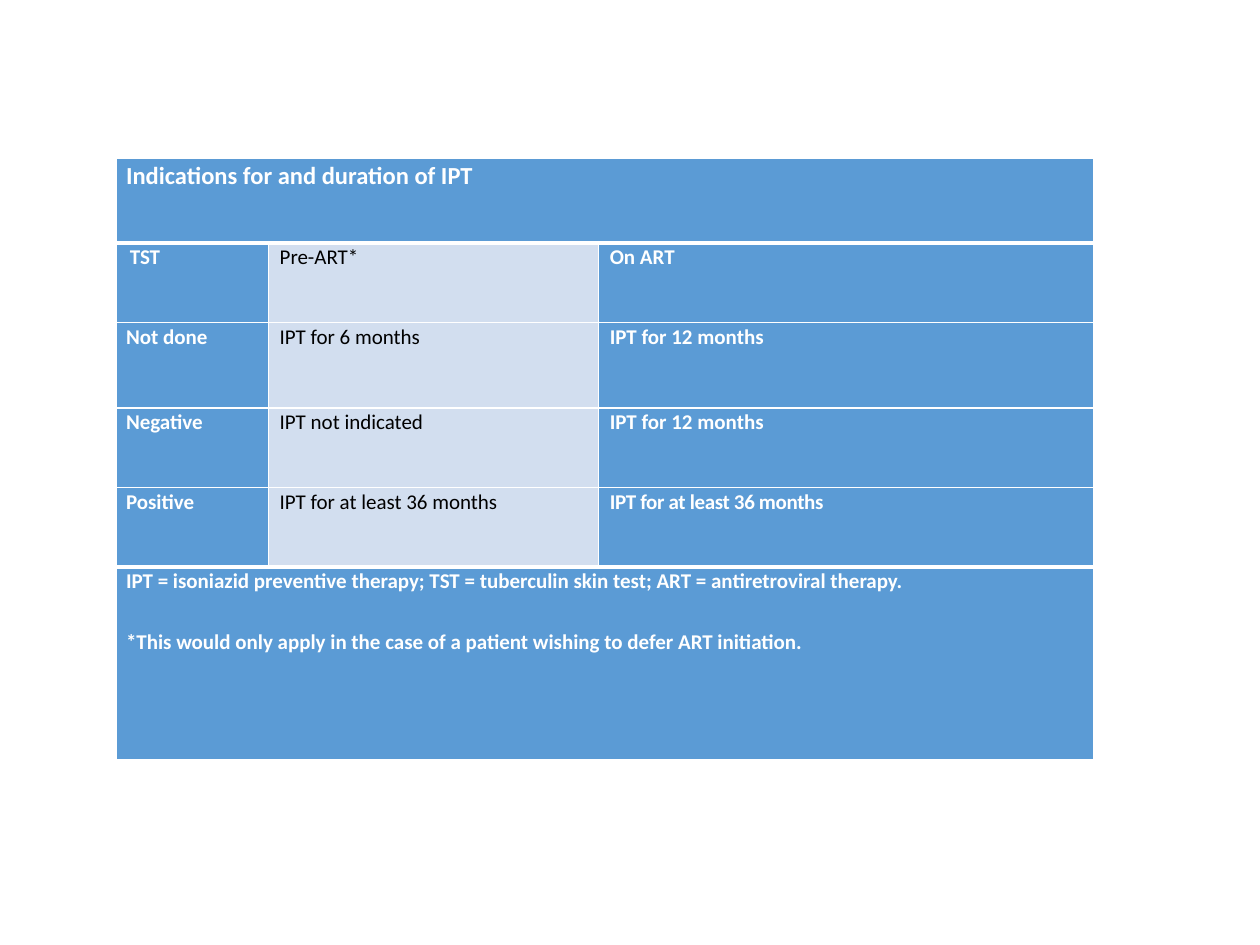
from lxml.etree import SubElement
from pptx import Presentation
from pptx.dml.color import RGBColor
from pptx.oxml.ns import qn
from pptx.util import Inches, Pt

BLUE = RGBColor(0x5B, 0x9B, 0xD5)
PALE = RGBColor(0xD2, 0xDE, 0xEF)
WHITE = RGBColor(0xFF, 0xFF, 0xFF)
BLACK = RGBColor(0, 0, 0)

TITLE = "Indications for and duration of IPT"
REGIMENS = [
    ("TST", "Pre-ART*", "On ART"),
    ("Not done", "IPT for 6 months", "IPT for 12 months"),
    ("Negative", "IPT not indicated", "IPT for 12 months"),
    ("Positive", "IPT for at least 36 months", "IPT for at least 36 months"),
]
FOOTNOTES = [
    "IPT = isoniazid preventive therapy; TST = tuberculin skin test; ART = antiretroviral therapy.",
    "*This would only apply in the case of a patient wishing to defer ART initiation.",
]
COLUMNS = [1.21, 2.62, 3.93]
ROWS = [0.67, 0.63, 0.68, 0.63, 0.63, 1.53]
SPACE_BEFORE = [7.8, 1.8, 2, 1.1, 1.1, 1.6]
FOOTNOTE_GAP = 19


def set_borders(cell, top, bottom):
    """Draw white cell borders; widths in points."""
    properties = cell._tc.get_or_add_tcPr()
    for side, width in (("L", 1), ("R", 1), ("T", top), ("B", bottom)):
        line = SubElement(properties, qn(f"a:ln{side}"), w=str(Pt(width)))
        color = SubElement(SubElement(line, qn("a:solidFill")), qn("a:srgbClr"))
        color.set("val", str(WHITE))


def style_cell(cell, row, pale=False):
    """Apply rules, fill and zero insets."""
    last = len(ROWS) - 1
    set_borders(cell, top=3 if row in (1, last) else 1,
                bottom=3 if row in (0, last - 1) else 1)
    cell.fill.solid()
    cell.fill.fore_color.rgb = PALE if pale else BLUE
    cell.margin_left = cell.margin_right = cell.margin_top = cell.margin_bottom = 0


def write_line(paragraph, text, space, indent=0.08, size=12, pale=False):
    paragraph.text = text
    paragraph.line_spacing = 1.07
    paragraph.space_before = Pt(space)
    properties = paragraph._p.get_or_add_pPr()
    properties.set("marL", str(Inches(indent)))
    properties.set("indent", "0")
    font = paragraph.font
    font.name, font.size, font.bold = "Calibri", Pt(size), not pale
    font.color.rgb = BLACK if pale else WHITE


def add_ipt_table(slide, left, top):
    width, height = sum(COLUMNS), sum(ROWS)
    table = slide.shapes.add_table(
        len(ROWS), len(COLUMNS),
        Inches(left), Inches(top), Inches(width), Inches(height)).table
    for column, column_width in zip(table.columns, COLUMNS):
        column.width = Inches(column_width)
    for row, row_height in zip(table.rows, ROWS):
        row.height = Inches(row_height)

    last = len(ROWS) - 1
    for r in range(len(ROWS)):
        for c in range(len(COLUMNS)):
            style_cell(table.cell(r, c), r, pale=c == 1 and 0 < r < last)

    # Title and footnote bands span every column
    for r in (0, last):
        table.cell(r, 0).merge(table.cell(r, len(COLUMNS) - 1))
    write_line(table.cell(0, 0).text_frame.paragraphs[0], TITLE,
               SPACE_BEFORE[0], size=14)
    notes = table.cell(last, 0).text_frame
    write_line(notes.paragraphs[0], FOOTNOTES[0], SPACE_BEFORE[last])
    write_line(notes.add_paragraph(), FOOTNOTES[1], FOOTNOTE_GAP)

    # Regimen by skin test result
    for r, regimen in enumerate(REGIMENS, start=1):
        for c, text in enumerate(regimen):
            indent = 0.09 if c else 0.11 if r == 1 else 0.08
            write_line(table.cell(r, c).text_frame.paragraphs[0], text,
                       SPACE_BEFORE[r], indent, pale=c == 1)

    # The last regimen is set slightly tighter
    longest = table.cell(last - 1, 2).text_frame.paragraphs[0].runs[0]
    longest._r.get_or_add_rPr().set("spc", "-20")


def main():
    deck = Presentation()
    deck.slide_width, deck.slide_height = Inches(10), Inches(7.5)
    slide = deck.slides.add_slide(deck.slide_layouts[6])
    add_ipt_table(slide, left=0.92, top=1.26)
    deck.save("out.pptx")


if __name__ == "__main__":
    main()
